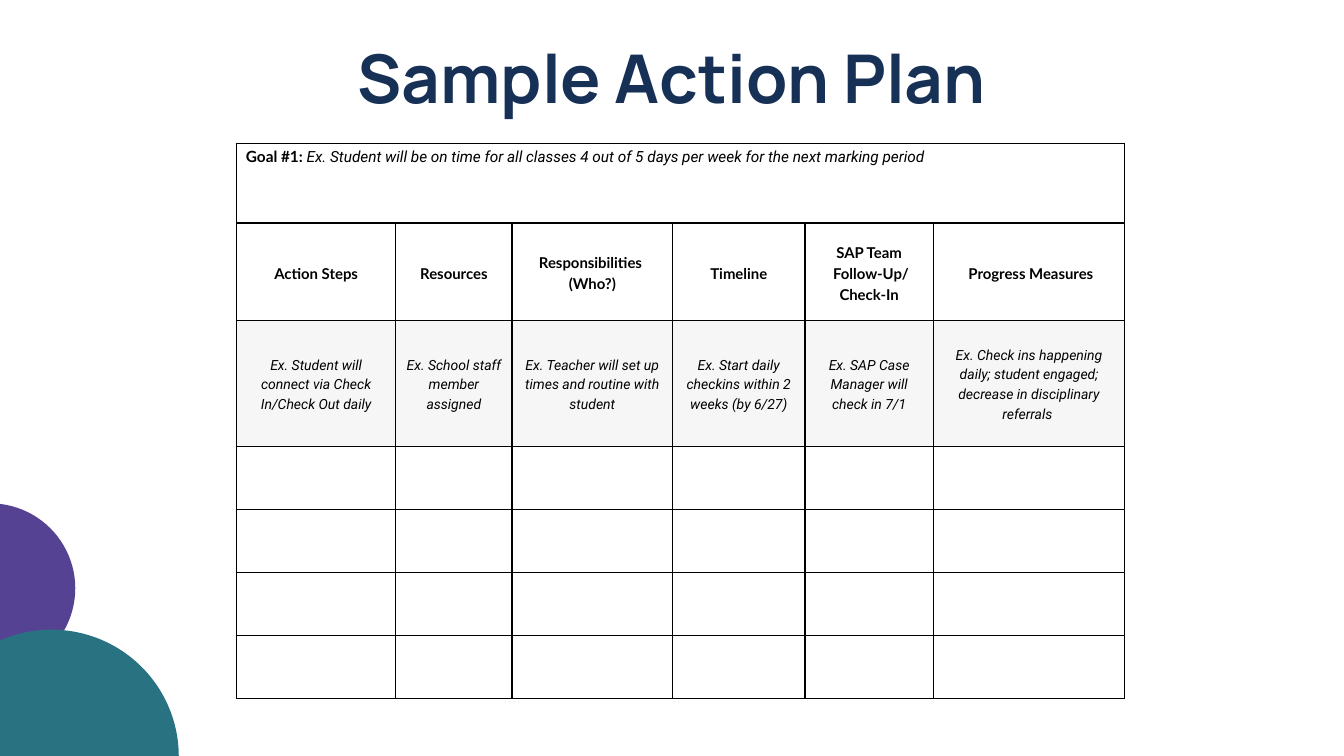
from lxml.etree import SubElement
from pptx import Presentation
from pptx.dml.color import RGBColor
from pptx.enum.shapes import MSO_SHAPE
from pptx.enum.text import MSO_ANCHOR, PP_ALIGN
from pptx.oxml.ns import qn
from pptx.util import Inches, Pt

COLORS = {
    "navy": "163056",
    "purple": "564293",
    "teal": "287281",
    "black": "000000",
    "white": "FFFFFF",
    "example": "F6F6F6",
}

FORMATS = {
    "title": {"name": "Manrope", "size": Pt(72), "bold": True, "italic": False},
    "goal_label": {"name": "Lato", "size": Pt(16.5), "bold": True, "italic": False},
    "goal": {"name": "Roboto", "size": Pt(16.5), "bold": False, "italic": True},
    "heading": {"name": "Lato", "size": Pt(16), "bold": True, "italic": False},
    "example": {"name": "Roboto", "size": Pt(15), "bold": False, "italic": True},
}

COLUMN_WIDTHS = [2.37, 1.73, 2.39, 1.97, 1.91, 2.85]
ROW_HEIGHTS = [1.19, 1.45, 1.87] + [0.94] * 4

GOAL = [
    ("Goal #1: ", "goal_label"),
    ("Ex. Student will be on time for all classes 4 out of 5 days per week "
     "for the next marking period", "goal"),
]
HEADINGS = [
    ["Action Steps"],
    ["Resources"],
    ["Responsibilities ", "(Who?)"],
    ["Timeline"],
    ["SAP Team", " Follow-Up/", "Check-In"],
    [" Progress Measures"],
]
EXAMPLES = [
    ["Ex. Student will connect via Check In/Check Out daily"],
    ["Ex. School staff member assigned"],
    ["Ex. Teacher will set up times and routine with student"],
    ["Ex. Start daily checkins within 2 weeks (by 6/27)"],
    ["Ex. SAP Case Manager will check in 7/1"],
    ["Ex. Check ins happening daily; student engaged; "
     "decrease in disciplinary referrals "],
]


def color(name):
    return RGBColor.from_string(COLORS[name])


def set_attributes(target, values):
    for attribute, value in values.items():
        setattr(target, attribute, value)


def add_run(paragraph, text, style, ink="black"):
    run = paragraph.add_run()
    run.text = text
    set_attributes(run.font, FORMATS[style])
    run.font.color.rgb = color(ink)


def add_circle(slide, left, top, width, height, fill):
    circle = slide.shapes.add_shape(
        MSO_SHAPE.OVAL, Inches(left), Inches(top), Inches(width), Inches(height))
    circle.shadow.inherit = False
    circle.fill.solid()
    circle.fill.fore_color.rgb = color(fill)
    circle.line.fill.background()


def write_title(slide, text):
    title = slide.shapes.title
    set_attributes(title, {"left": Inches(0.62), "top": Inches(0.54),
                           "width": Inches(18.75), "height": Inches(1)})
    frame = title.text_frame
    set_attributes(frame, {"margin_left": 0, "margin_right": 0, "margin_top": 0,
                           "margin_bottom": 0, "word_wrap": True,
                           "vertical_anchor": MSO_ANCHOR.TOP})
    paragraph = frame.paragraphs[0]
    paragraph.alignment = PP_ALIGN.CENTER
    add_run(paragraph, text, "title", "navy")


def add_borders(cell):
    properties = cell._tc.get_or_add_tcPr()
    for position, side in enumerate(("lnL", "lnR", "lnT", "lnB")):
        border = SubElement(properties, qn(f"a:{side}"), w=str(Pt(1.5)))
        fill = SubElement(border, qn("a:solidFill"))
        SubElement(fill, qn("a:srgbClr"), val=COLORS["black"])
        properties.insert(position, border)


def format_cell(cell, fill, anchor=MSO_ANCHOR.MIDDLE):
    inset = Inches(0.14)
    set_attributes(cell, {"margin_left": inset, "margin_right": inset,
                          "margin_top": inset, "margin_bottom": inset,
                          "vertical_anchor": anchor})
    cell.fill.solid()
    cell.fill.fore_color.rgb = color(fill)
    add_borders(cell)


def write_cell(cell, lines, style, spacing):
    frame = cell.text_frame
    for index, line in enumerate(lines):
        paragraph = frame.add_paragraph() if index else frame.paragraphs[0]
        set_attributes(paragraph, {"alignment": PP_ALIGN.CENTER,
                                   "line_spacing": Pt(spacing)})
        add_run(paragraph, line, style)


def write_goal(table):
    goal = table.cell(0, 0)
    goal.merge(table.cell(0, len(COLUMN_WIDTHS) - 1))
    goal.vertical_anchor = MSO_ANCHOR.TOP
    paragraph = goal.text_frame.paragraphs[0]
    paragraph.line_spacing = Pt(14.3)
    for text, style in GOAL:
        add_run(paragraph, text, style)


def add_action_plan(slide):
    table = slide.shapes.add_table(
        len(ROW_HEIGHTS), len(COLUMN_WIDTHS), Inches(3.52), Inches(2.13),
        Inches(sum(COLUMN_WIDTHS)), Inches(sum(ROW_HEIGHTS))).table
    set_attributes(table, {"first_row": False, "horz_banding": False})
    for column, width in zip(table.columns, COLUMN_WIDTHS):
        column.width = Inches(width)
    for index, (row, height) in enumerate(zip(table.rows, ROW_HEIGHTS)):
        row.height = Inches(height)
        for cell in row.cells:
            format_cell(cell, "example" if index == 2 else "white")
    write_goal(table)
    for column, (heading, example) in enumerate(zip(HEADINGS, EXAMPLES)):
        write_cell(table.cell(1, column), heading, "heading", 22.4)
        write_cell(table.cell(2, column), example, "example", 21)


def main():
    presentation = Presentation()
    set_attributes(presentation, {"slide_width": Inches(20),
                                  "slide_height": Inches(11.25)})
    slide = presentation.slides.add_slide(presentation.slide_layouts[5])
    slide.background.fill.solid()
    slide.background.fill.fore_color.rgb = color("white")
    add_circle(slide, -1.42, 7.49, 2.54, 2.53, "purple")
    add_circle(slide, -1.13, 9.37, 3.79, 3.77, "teal")
    write_title(slide, "Sample Action Plan")
    add_action_plan(slide)
    presentation.save("out.pptx")


if __name__ == "__main__":
    main()
